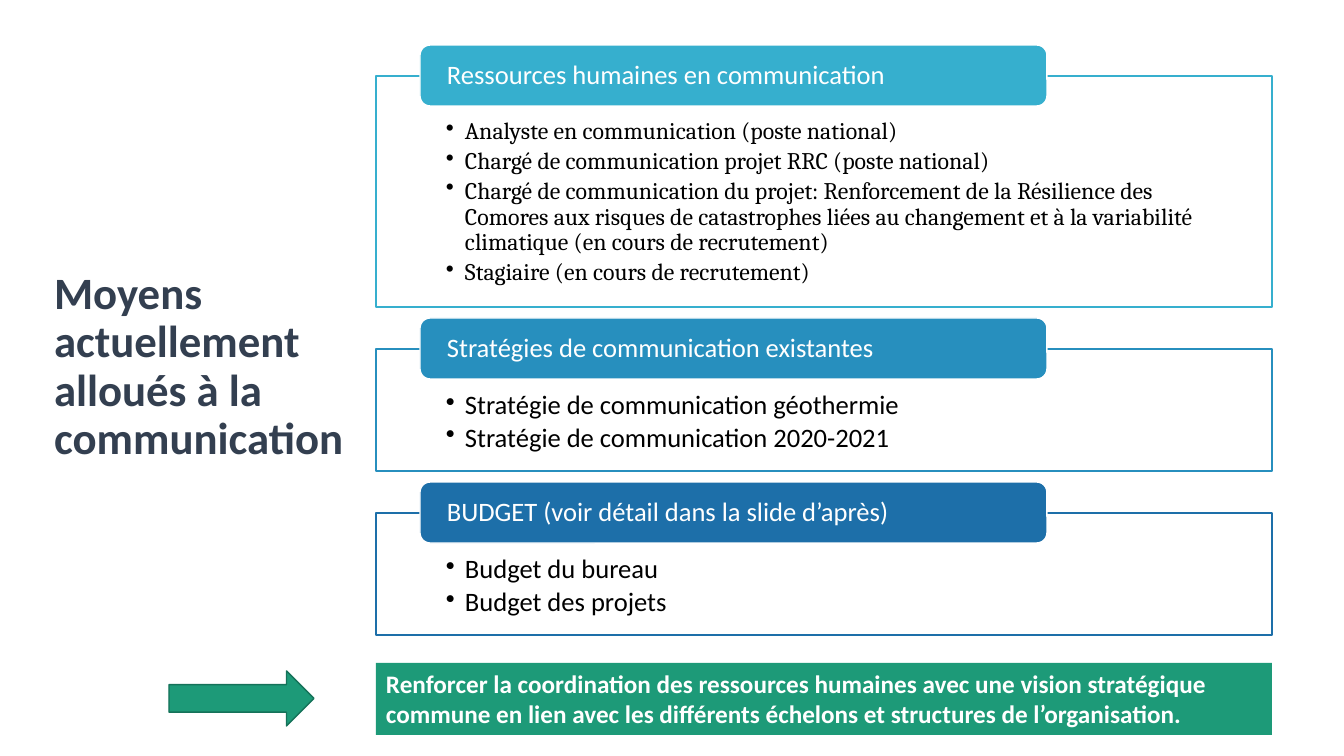
"""Builds the slide on the means currently allotted to communication."""
from lxml import etree
from pptx import Presentation
from pptx.dml.color import RGBColor
from pptx.enum.shapes import MSO_SHAPE
from pptx.enum.text import MSO_ANCHOR, MSO_AUTO_SIZE, PP_ALIGN
from pptx.oxml.ns import qn
from pptx.util import Emu, Pt

RECT, ROUND, ARROW = MSO_SHAPE.RECTANGLE, MSO_SHAPE.ROUNDED_RECTANGLE, MSO_SHAPE.RIGHT_ARROW
TOP, MIDDLE = MSO_ANCHOR.TOP, MSO_ANCHOR.MIDDLE
PX = 914400 / 100.8
LEFT, WIDTH = 376, 896
TAB_LEFT, TAB_WIDTH, TAB_HEIGHT, TAB_RISE = 420, 627, 61, 31
GREEN = "1D9A78"


def add_box(kind, box, fill, line=None):
    sp = s.shapes.add_shape(kind, *[Emu(round(v * PX)) for v in box])
    sp.shadow.inherit = False
    sp.fill.solid()
    sp.fill.fore_color.rgb = RGBColor.from_string(fill)
    if line:
        sp.line.color.rgb = RGBColor.from_string(line)
        sp.line.width = Pt(1)
    else:
        sp.line.fill.background()
    return sp


def write(sp, lines, size, color, insets, anchor, font="Calibri", bold=False,
          spacing=0.9, after=0, bullet=False):
    tf = sp.text_frame
    frame = {"word_wrap": True, "auto_size": MSO_AUTO_SIZE.NONE, "vertical_anchor": anchor}
    sides = ("margin_left", "margin_top", "margin_right", "margin_bottom")
    frame.update(zip(sides, [Emu(round(v * PX)) for v in insets]))
    for name, value in frame.items():
        setattr(tf, name, value)
    for i, text in enumerate(lines):
        p = tf.paragraphs[0] if i == 0 else tf.add_paragraph()
        layout = {"alignment": PP_ALIGN.LEFT, "line_spacing": spacing,
                  "space_before": Pt(0), "space_after": Pt(after)}
        for name, value in layout.items():
            setattr(p, name, value)
        if bullet:
            pPr = p._p.get_or_add_pPr()
            indent = round(19 * PX)
            pPr.set("marL", str(indent))
            pPr.set("indent", str(-indent))
            etree.SubElement(pPr, qn("a:buChar"), char="•")
        r = p.add_run()
        r.text = text
        for name, value in {"name": font, "size": Pt(size), "bold": bold}.items():
            setattr(r.font, name, value)
        r.font.color.rgb = RGBColor.from_string(color)


prs = Presentation()
prs.slide_width, prs.slide_height = Emu(round(1344 * PX)), Emu(round(756 * PX))
s = prs.slides.add_slide(prs.slide_layouts[5])

title = s.shapes.title
for side, value in zip(("left", "top", "width", "height"), (44, 183, 316, 369)):
    setattr(title, side, Emu(round(value * PX)))
write(title, ["Moyens actuellement alloués à la communication"], 32, "333F50",
      (10, 5, 10, 5), MIDDLE, bold=True)

sections = [
    ("Ressources humaines en communication", 76, 231, "36AFCE", "Cambria", 17, [
        "Analyste en communication (poste national)",
        "Chargé de communication projet RRC (poste national)",
        "Chargé de communication du projet: Renforcement de la Résilience des Comores "
        "aux risques de catastrophes liées au changement et à la variabilité climatique "
        "(en cours de recrutement)",
        "Stagiaire (en cours de recrutement)"]),
    ("Stratégies de communication existantes", 349, 122, "278FBE", "Calibri", 19, [
        "Stratégie de communication géothermie",
        "Stratégie de communication 2020-2021"]),
    ("BUDGET (voir détail dans la slide d’après)", 513, 122, "1D6FA9", "Calibri", 19, [
        "Budget du bureau",
        "Budget des projets"]),
]
for heading, top, height, color, font, size, items in sections:
    panel = add_box(RECT, (LEFT, top, WIDTH, height), "FFFFFF", color)
    write(panel, items, size, "000000", (70, 43, 70, 14), TOP, font=font, after=3, bullet=True)
    tab = add_box(ROUND, (TAB_LEFT, top - TAB_RISE, TAB_WIDTH, TAB_HEIGHT), color, "FFFFFF")
    write(tab, [heading], 19, "FFFFFF", (24, 0, 24, 0), MIDDLE)

add_box(ARROW, (169, 671, 145, 55), GREEN, "157259")
goal = add_box(RECT, (LEFT, 663, WIDTH, 72), GREEN)
write(goal, ["Renforcer la coordination des ressources humaines avec une vision stratégique "
             "commune en lien avec les différents échelons et structures de l’organisation."],
      18, "FFFFFF", (10, 5, 10, 5), TOP, bold=True, spacing=1.0)

prs.save("out.pptx")
